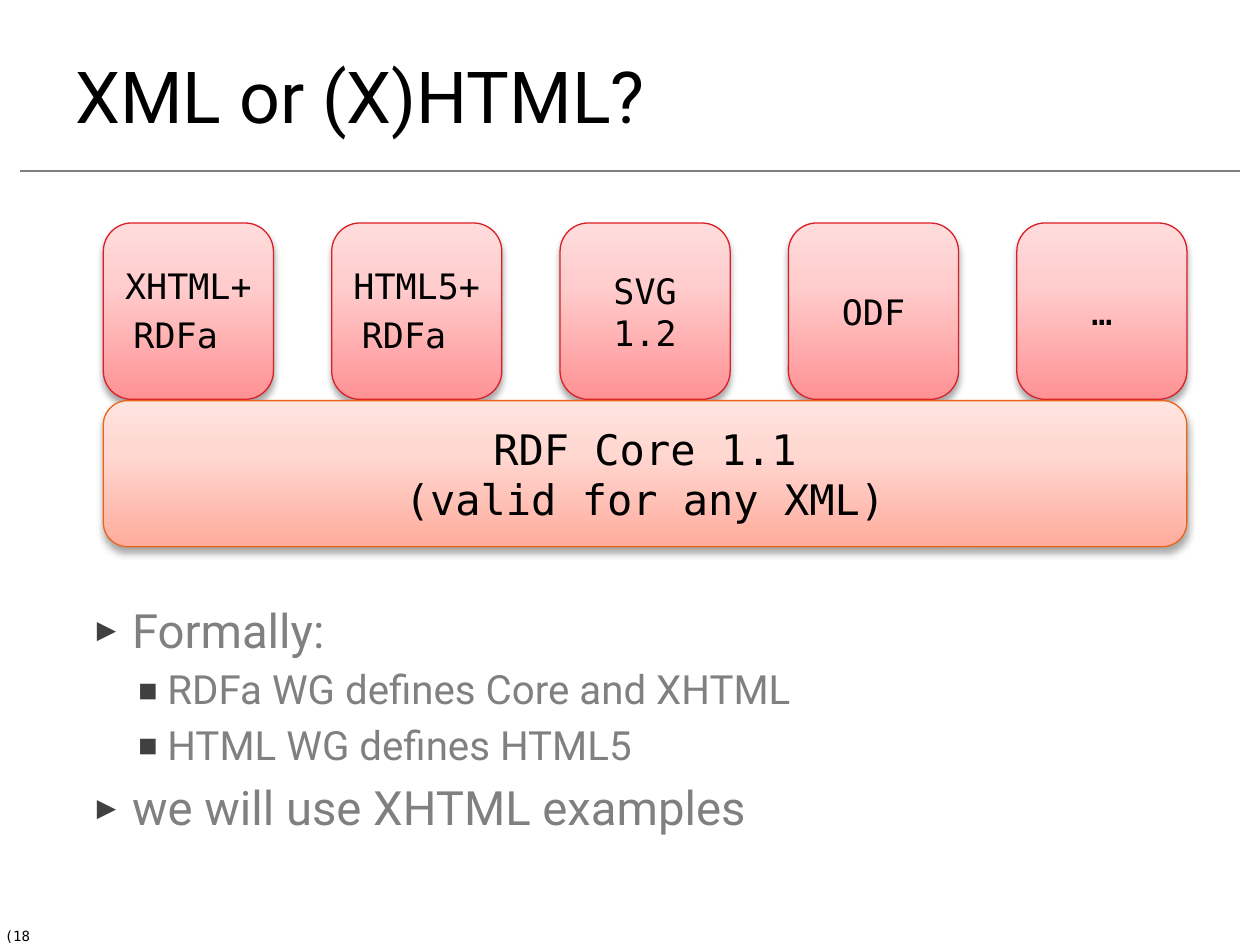
from lxml import etree
from pptx import Presentation
from pptx.dml.color import RGBColor as RGB
from pptx.enum.shapes import MSO_CONNECTOR as LINE, MSO_SHAPE as SHAPE
from pptx.enum.text import MSO_ANCHOR as ANCHOR, PP_ALIGN as ALIGN
from pptx.oxml import parse_xml
from pptx.oxml.ns import nsdecls, qn
from pptx.util import Inches, Pt

BLACK = RGB(0x00, 0x00, 0x00)
GRAY = RGB(0x80, 0x80, 0x80)
DARK = RGB(0x40, 0x40, 0x40)
RED = RGB(0xDA, 0x1F, 0x28)
ORANGE = RGB(0xEB, 0x64, 0x1B)
PINKS = (RGB(0xFF, 0x92, 0x94), RGB(0xFF, 0xCD, 0xCD), RGB(0xFF, 0xDC, 0xDC))
PEACHES = (RGB(0xFF, 0xAC, 0x9C), RGB(0xFF, 0xD8, 0xD2), RGB(0xFF, 0xE4, 0xDF))
MONO = "DejaVu Sans Mono"
SANS = "Roboto"


def style(font, name, size, color):
    font.name = name
    font.size = Pt(size)
    font.color.rgb = color


def add_text(slide, box, text, name, size, color):
    frame = slide.shapes.add_textbox(*map(Inches, box)).text_frame
    frame.word_wrap = True
    frame.text = text
    for run in frame.paragraphs[0].runs:
        style(run.font, name, size, color)
    return frame


def shade(shape, colors):
    props = shape.fill._xPr
    stops = "".join(
        f'<a:gs pos="{pos}000"><a:srgbClr val="{color}"/></a:gs>'
        for pos, color in zip((0, 65, 100), colors))
    shape.fill.background()
    props.replace(props.find(qn("a:noFill")), parse_xml(
        f'<a:gradFill {nsdecls("a")} rotWithShape="1"><a:gsLst>{stops}</a:gsLst>'
        '<a:lin ang="16200000" scaled="0"/></a:gradFill>'))


def add_shadow(shape):
    shape.shadow.inherit = False
    effects = shape._element.spPr.find(qn("a:effectLst"))
    effects.append(parse_xml(
        f'<a:outerShdw {nsdecls("a")} blurRad="{Pt(4)}" dist="{Pt(3)}" '
        'dir="5400000" rotWithShape="0"><a:srgbClr val="000000">'
        '<a:alpha val="35000"/></a:srgbClr></a:outerShdw>'))


def add_block(slide, box, text, size, colors, edge):
    shape = slide.shapes.add_shape(SHAPE.ROUNDED_RECTANGLE, *map(Inches, box))
    shade(shape, colors)
    shape.line.color.rgb = edge
    shape.line.width = Pt(0.75)
    add_shadow(shape)
    frame = shape.text_frame
    frame.vertical_anchor = ANCHOR.MIDDLE
    frame.text = text
    for para in frame.paragraphs:
        para.alignment = ALIGN.CENTER
        for run in para.runs:
            style(run.font, MONO, size, BLACK)
    return frame


def add_stack(slide, box):
    left, top, width, height = box
    side, tall, base = 1.35, 1.4, 1.16
    labels = ("XHTML+RDFa", "HTML5+RDFa", "SVG\n1.2", "ODF", "…")
    step = (width - side) / (len(labels) - 1)
    for i, label in enumerate(labels):
        frame = add_block(slide, (left + i * step, top, side, tall),
                          label, 20, PINKS, RED)
        if label.endswith("RDFa"):
            run = frame.paragraphs[0].add_run()
            run.text = " "
            style(run.font, MONO, 24, BLACK)
    add_block(slide, (left, top + height - base, width, base),
              "RDF Core 1.1\n(valid for any XML)", 24, PEACHES, ORANGE)


def add_bullet(para, char, scale, margin, indent):
    props = para._p.get_or_add_pPr()
    props.set("marL", str(Inches(margin)))
    props.set("indent", str(Inches(indent)))
    color = etree.SubElement(props, qn("a:buClr"))
    etree.SubElement(color, qn("a:srgbClr"), val=str(DARK))
    etree.SubElement(props, qn("a:buSzPct"), val=f"{scale}000")
    etree.SubElement(props, qn("a:buFont"), typeface=MONO)
    etree.SubElement(props, qn("a:buChar"), char=char)


def add_body(slide, box):
    levels = (("▶", 68, 0.4, -0.28, 27, 6), ("▪", 100, 0.68, -0.25, 23, 4))
    items = ((0, "Formally:"), (1, "RDFa WG defines Core and XHTML"),
             (1, "HTML WG defines HTML5"), (0, "we will use XHTML examples"))
    text = "\n".join(item for _, item in items)
    frame = add_text(slide, box, text, SANS, 27, GRAY)
    for i, (para, (level, _)) in enumerate(zip(frame.paragraphs, items)):
        char, scale, margin, indent, size, gap = levels[level]
        para.level = level
        add_bullet(para, char, scale, margin, indent)
        para.space_before = Pt(gap if i else 0)
        for run in para.runs:
            style(run.font, SANS, size, GRAY)


def add_header(slide, box):
    frame = add_text(slide, box, "XML or (X)HTML?", SANS, 41, BLACK)
    frame.vertical_anchor = ANCHOR.MIDDLE
    left, right, y = map(Inches, (0.16, 9.84, 1.36))
    rule = slide.shapes.add_connector(LINE.STRAIGHT, left, y, right, y)
    rule.line.color.rgb = GRAY
    rule.line.width = Pt(1)
    etree.SubElement(rule._element.spPr, qn("a:effectLst"))


def main():
    deck = Presentation()
    deck.slide_width, deck.slide_height = Inches(10), Inches(7.5)
    slide = deck.slides.add_slide(deck.slide_layouts[6])
    add_text(slide, (-0.06, 7.31, 0.4, 0.23), "(18)", MONO, 8, BLACK)
    add_header(slide, (0.5, 0.25, 9, 1))
    add_body(slide, (0.55, 4.72, 9, 2.03))
    add_stack(slide, (0.82, 1.77, 8.6, 2.57))
    deck.save("out.pptx")


if __name__ == "__main__":
    main()
